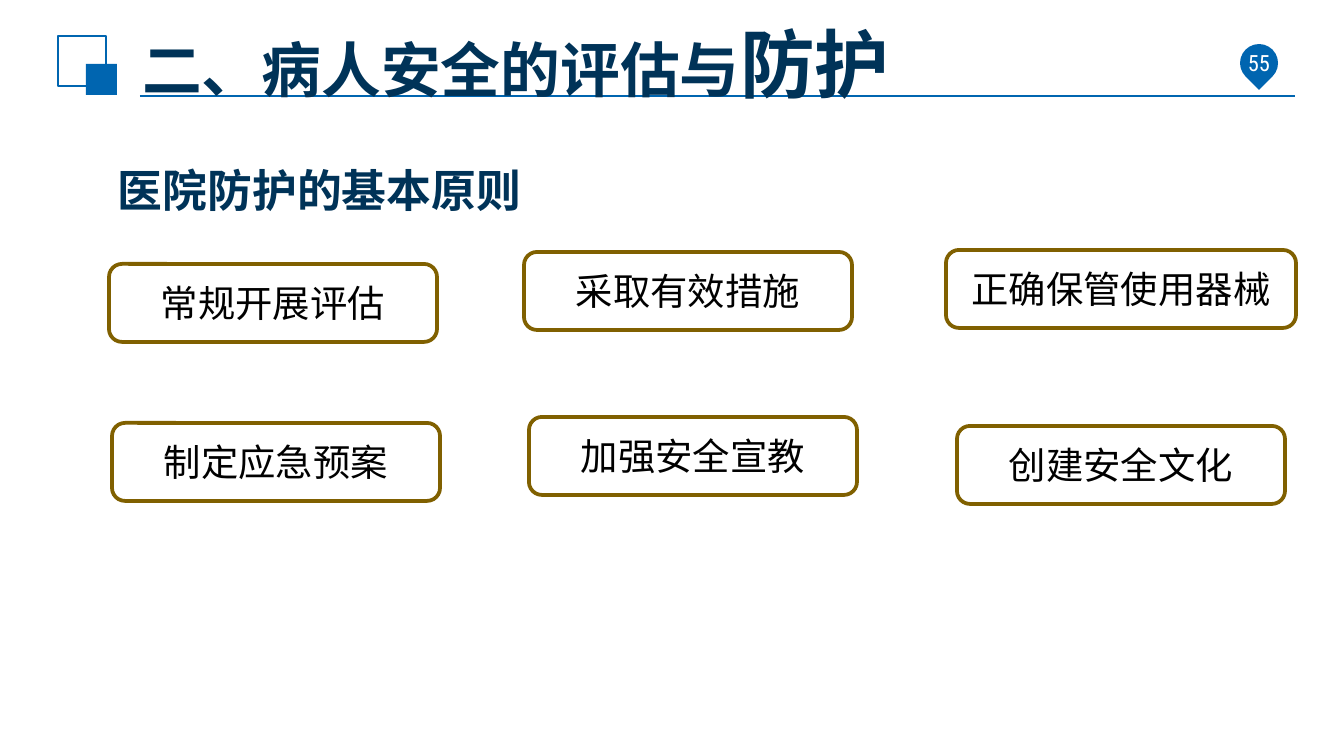
import pptx
import pptx.util
import pptx.dml.color
import pptx.enum.shapes
import pptx.enum.text
import pptx.oxml.ns
import lxml.etree

SCALE = 914400 / 134.4
COLORS = {"blue": "0065B0", "navy": "003358", "gold": "806000", "black": "000000", "white": "FFFFFF"}
SHAPES = pptx.enum.shapes.MSO_SHAPE
ALIGN = pptx.enum.text.PP_ALIGN
ANCHOR = pptx.enum.text.MSO_ANCHOR


def px(*lengths):
    return [round(length * SCALE) for length in lengths]


def write(box, *runs, color="black", font="Arial", bold=False, align=ALIGN.LEFT,
          anchor=ANCHOR.MIDDLE, inset=(13, 7)):
    frame = box.text_frame
    frame.word_wrap = True
    frame.vertical_anchor = anchor
    frame.margin_left = frame.margin_right = px(inset[0])[0]
    frame.margin_top = frame.margin_bottom = px(inset[1])[0]
    para = frame.paragraphs[0]
    para.alignment = align
    for text, size in runs:
        span = para.add_run()
        span.text = text
        span.font.size = pptx.util.Pt(size)
        span.font.name = font
        span.font.bold = bold
        span.font.color.rgb = pptx.dml.color.RGBColor.from_string(COLORS[color])


deck = pptx.Presentation()
deck.slide_width, deck.slide_height = px(1344, 756)
page = deck.slides.add_slide(deck.slide_layouts[6])

rule = page.shapes.add_connector(pptx.enum.shapes.MSO_CONNECTOR.STRAIGHT, *px(140, 96, 1295, 96))
rule.line.color.rgb = pptx.dml.color.RGBColor.from_string(COLORS["blue"])
rule.line.width = pptx.util.Pt(1.25)
lxml.etree.SubElement(rule.element.spPr, pptx.oxml.ns.qn("a:effectLst"))

principles = [
    ("常规开展评估", 109, 264, 328),
    ("采取有效措施", 524, 252, 328),
    ("正确保管使用器械", 946, 250, 350),
    ("制定应急预案", 112, 423, 328),
    ("加强安全宣教", 529, 417, 328),
    ("创建安全文化", 957, 426, 328),
]
outlines = [
    (SHAPES.RECTANGLE, (58, 36, 48, 50), None, "blue", 1.5, 0, None),
    (SHAPES.RECTANGLE, (86, 64, 31, 31), "blue", None, 0, 0, None),
    (SHAPES.TEAR, (1240, 44, 38, 38), "blue", None, 0, 135, None),
]
for text, left, top, width in principles:
    outlines.append((SHAPES.ROUNDED_RECTANGLE, (left, top, width, 78), None, "gold", 2, 0, text))

for kind, place, fill, line, weight, rotation, text in outlines:
    shape = page.shapes.add_shape(kind, *px(*place))
    shape.shadow.inherit = False
    shape.rotation = rotation
    if fill:
        shape.fill.solid()
        shape.fill.fore_color.rgb = pptx.dml.color.RGBColor.from_string(COLORS[fill])
    else:
        shape.fill.background()
    if line:
        shape.line.color.rgb = pptx.dml.color.RGBColor.from_string(COLORS[line])
        shape.line.width = pptx.util.Pt(weight)
    else:
        shape.line.fill.background()
    if text:
        write(shape, (text, 20), align=ALIGN.CENTER)

title = page.shapes.add_textbox(*px(133, 39, 867, 48))
write(title, ("二、病人安全的评估与", 32), ("防护", 40), color="navy", bold=True, inset=(9, 5))

number = page.shapes.add_textbox(*px(1169, 41, 180, 44))
write(number, ("55", 12), color="white", font="Roboto Condensed", align=ALIGN.CENTER, inset=(15, 8))

subtitle = page.shapes.add_textbox(*px(105, 156, 519, 67))
write(subtitle, ("医院防护的基本原则", 24), color="navy", bold=True, anchor=ANCHOR.TOP)

deck.save("out.pptx")
